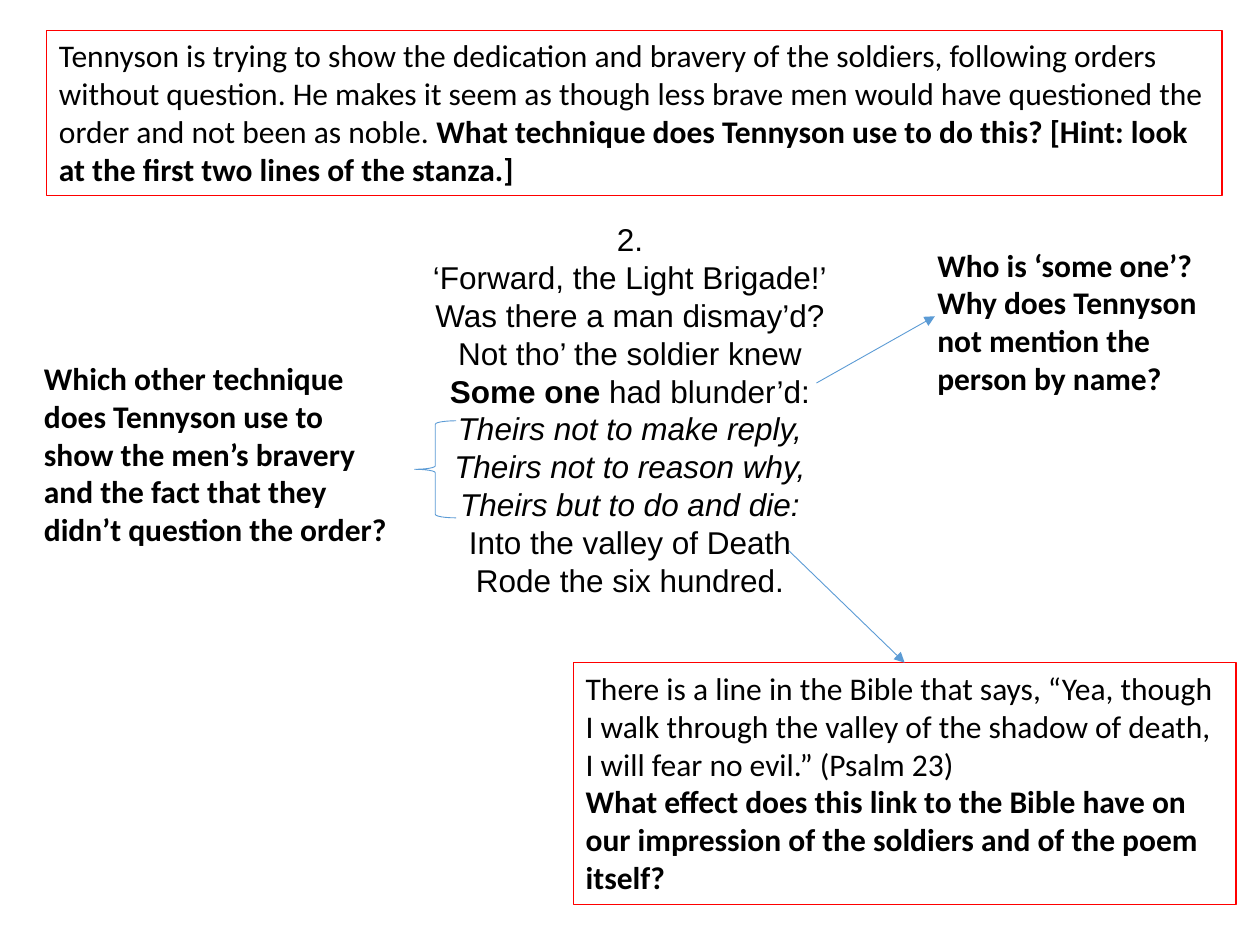
from dataclasses import dataclass
from typing import Optional

import pptx
import pptx.dml.color
import pptx.enum.shapes
import pptx.enum.text
import pptx.oxml
import pptx.oxml.ns
import pptx.util
from pptx.util import Inches

BLACK = pptx.dml.color.RGBColor(0x00, 0x00, 0x00)
RED = pptx.dml.color.RGBColor(0xFF, 0x00, 0x00)
BLUE = pptx.dml.color.RGBColor(0x5B, 0x9B, 0xD5)

PLAIN = {}
BOLD = {"bold": True}
ITALIC = {"italic": True}
ALIGN = pptx.enum.text.PP_ALIGN


@dataclass
class TextBlock:
    """A text box; each paragraph is a list of (text, format) runs."""
    left: float
    top: float
    width: float
    height: float
    paragraphs: list
    font: str = "Calibri"
    alignment: int = ALIGN.LEFT
    framed: bool = False


@dataclass
class Arrow:
    start: tuple
    end: tuple
    target: Optional[object] = None
    site: int = 0


STANZA = TextBlock(2.5, 1.7, 5, 3.13, [
    [("2.", PLAIN)],
    [("‘Forward, the Light Brigade!’", PLAIN)],
    [("Was there a man dismay’d?", PLAIN)],
    [("Not tho’ the soldier knew", PLAIN)],
    [("Some one ", BOLD), ("had blunder’d:", PLAIN)],
    [("Theirs not to make reply,", ITALIC)],
    [("Theirs not to reason why,", ITALIC)],
    [("Theirs but to do and die:", ITALIC)],
    [("Into the valley of Death", PLAIN)],
    [("Rode the six hundred.", PLAIN)],
], font="Arial", alignment=ALIGN.CENTER)

DEDICATION_NOTE = TextBlock(0.37, 0.24, 9.33, 1.31, [[
    ("Tennyson is trying to show the dedication and bravery of the soldiers, "
     "following orders without question. He makes it seem as though less brave "
     "men would have questioned the order and not been as noble. ", PLAIN),
    ("What technique does Tennyson use to do this? "
     "[Hint: look at the first two lines of the stanza.]", BOLD),
]], framed=True)

SOME_ONE_QUESTION = TextBlock(7.34, 1.9, 2.42, 1.31, [
    [("Who is ‘some one’?", BOLD)],
    [("Why does Tennyson not mention the person by name?", BOLD)],
])

TECHNIQUE_QUESTION = TextBlock(0.25, 2.8, 2.92, 1.92, [[
    ("Which other technique does Tennyson use to show the men’s bravery "
     "and the fact that they didn’t question the order?", BOLD),
]])

BIBLE_NOTE = TextBlock(4.55, 5.26, 5.26, 1.92, [
    [("There is a line in the Bible that says, “Yea, though I walk through the "
      "valley of the shadow of death, I will fear no evil.” (Psalm 23)", PLAIN)],
    [("What effect does this link to the Bible have on our impression of the "
      "soldiers and of the poem itself?", BOLD)],
], framed=True)


def set_line(line, color, width: float) -> None:
    line.color.rgb = color
    line.width = pptx.util.Pt(width)


def add_text(slide, block: TextBlock):
    shape = slide.shapes.add_textbox(Inches(block.left), Inches(block.top),
                                     Inches(block.width), Inches(block.height))
    if block.framed:
        set_line(shape.line, RED, 0.75)
    frame = shape.text_frame
    frame.word_wrap = True
    frame.auto_size = pptx.enum.text.MSO_AUTO_SIZE.SHAPE_TO_FIT_TEXT
    base = {"name": block.font, "size": pptx.util.Pt(18)}
    for index, runs in enumerate(block.paragraphs):
        paragraph = frame.add_paragraph() if index else frame.paragraphs[0]
        paragraph.alignment = block.alignment
        for text, style in runs:
            run = paragraph.add_run()
            run.text = text
            run.font.color.rgb = BLACK
            for attribute, value in {**base, **style}.items():
                setattr(run.font, attribute, value)
    return shape


def add_arrow(slide, arrow: Arrow) -> None:
    connector = slide.shapes.add_connector(
        pptx.enum.shapes.MSO_CONNECTOR.STRAIGHT,
        *(Inches(value) for value in arrow.start + arrow.end))
    if arrow.target is not None:
        connector.end_connect(arrow.target, arrow.site)
    set_line(connector.line, BLUE, 0.5)
    # Arrowhead at the end, and no theme shadow
    head = pptx.oxml.parse_xml(
        f'<a:tailEnd {pptx.oxml.ns.nsdecls("a")} type="triangle"/>')
    connector.line._get_or_add_ln().append(head)
    connector._element.spPr.append(pptx.oxml.parse_xml(
        f'<a:effectLst {pptx.oxml.ns.nsdecls("a")}/>'))


def add_brace(slide, left: float, top: float, width: float, height: float) -> None:
    brace = slide.shapes.add_shape(
        pptx.enum.shapes.MSO_SHAPE.LEFT_BRACE,
        Inches(left), Inches(top), Inches(width), Inches(height))
    brace.shadow.inherit = False
    brace.fill.background()
    set_line(brace.line, BLUE, 0.5)


def main() -> None:
    presentation = pptx.Presentation()
    presentation.slide_width = Inches(10)
    presentation.slide_height = Inches(7.5)
    slide = presentation.slides.add_slide(presentation.slide_layouts[6])

    # Stanza and the notes above and to the right
    for block in (STANZA, DEDICATION_NOTE, SOME_ONE_QUESTION):
        add_text(slide, block)
    add_arrow(slide, Arrow((6.48, 3.04), (7.42, 2.51)))

    # Repeated "Theirs" lines and their question
    add_brace(slide, 3.29, 3.34, 0.33, 0.77)
    add_text(slide, TECHNIQUE_QUESTION)

    # Biblical allusion
    bible_box = add_text(slide, BIBLE_NOTE)
    add_arrow(slide, Arrow((6.26, 4.37), (7.18, 5.26), bible_box, 0))

    presentation.save("out.pptx")


if __name__ == "__main__":
    main()
